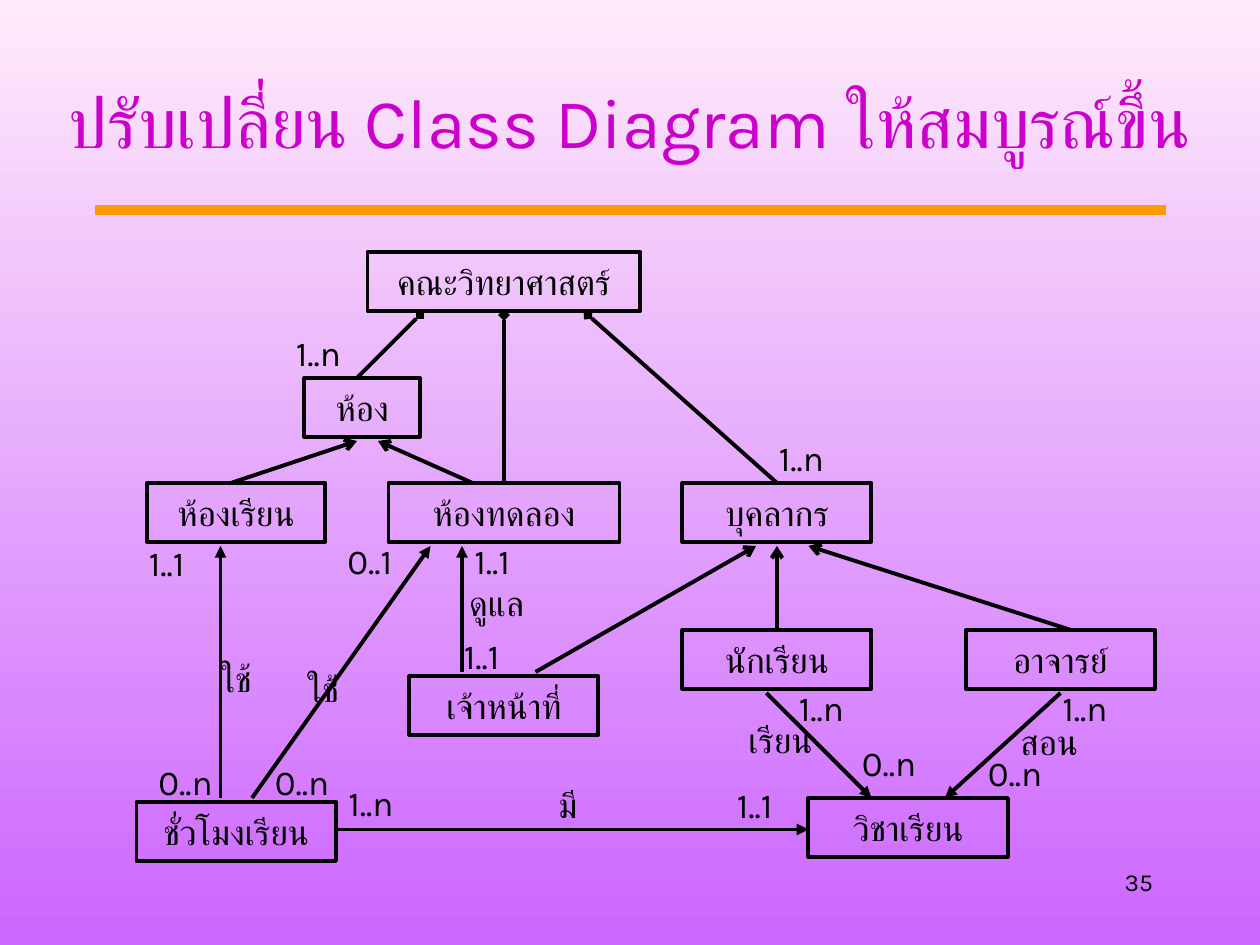
from dataclasses import dataclass

from lxml.etree import SubElement
from pptx import Presentation
from pptx.dml.color import RGBColor
from pptx.enum.shapes import MSO_CONNECTOR as Connector
from pptx.enum.shapes import MSO_SHAPE as Preset
from pptx.enum.text import MSO_ANCHOR as Anchor
from pptx.enum.text import PP_ALIGN as Align
from pptx.oxml.ns import qn
from pptx.util import Emu, Pt

EMU_PER_PX = 7620  # 120 px to the inch
BOX_HEIGHT = 56
LABEL_HEIGHT = 52


@dataclass(frozen=True)
class Theme:
    font: str = "Karla"
    ink: str = "000000"
    title: str = "CC00CC"
    rule: str = "FF9900"
    sky_top: str = "FFEBFA"
    sky_bottom: str = "CC66FF"
    title_size: int = 40
    body_size: int = 20
    number_size: int = 14
    line_width: float = 2.25
    rule_width: float = 6


@dataclass(frozen=True)
class ClassBox:
    name: str
    left: int
    top: int
    width: int


@dataclass(frozen=True)
class Label:
    text: str
    left: int
    top: int
    width: int = 80


@dataclass(frozen=True)
class Link:
    start: tuple[int, int]
    end: tuple[int, int]
    head: str


THEME = Theme()

BOXES = [
    ClassBox("คณะวิทยาศาสตร์", 350, 240, 260),
    ClassBox("ห้อง", 290, 360, 110),
    ClassBox("ห้องเรียน", 140, 460, 170),
    ClassBox("ห้องทดลอง", 370, 460, 220),
    ClassBox("บุคลากร", 650, 460, 180),
    ClassBox("นักเรียน", 650, 600, 180),
    ClassBox("อาจารย์", 920, 600, 180),
    ClassBox("เจ้าหน้าที่", 390, 644, 180),
    ClassBox("ชั่วโมงเรียน", 130, 764, 190),
    ClassBox("วิชาเรียน", 770, 760, 190),
]

LINKS = [
    # Aggregation: parts of the faculty
    Link((340, 360), (400, 300), "diamond"),
    Link((480, 460), (480, 300), "diamond"),
    Link((740, 460), (560, 300), "diamond"),
    # Inheritance: kinds of room and of personnel
    Link((220, 460), (340, 420), "arrow"),
    Link((450, 460), (360, 420), "arrow"),
    Link((510, 640), (720, 520), "arrow"),
    Link((740, 600), (740, 520), "arrow"),
    Link((1020, 600), (770, 520), "arrow"),
    # Association: uses, looks after, has, studies, teaches
    Link((210, 760), (210, 520), "triangle"),
    Link((240, 760), (410, 520), "triangle"),
    Link((440, 640), (440, 520), "triangle"),
    Link((320, 790), (770, 790), "triangle"),
    Link((730, 660), (830, 760), "triangle"),
    Link((1010, 660), (900, 760), "triangle"),
]

LABELS = [
    # Association names
    Label("ใช้", 198, 620, 60),
    Label("ใช้", 281, 630, 60),
    Label("ดูแล", 435, 548, 85),
    Label("มี", 520, 740, 44),
    Label("เรียน", 701, 678, 89),
    Label("สอน", 960, 680, 84),
    # Multiplicities
    Label("1..n", 270, 310),
    Label("1..n", 730, 410),
    Label("1..1", 130, 510),
    Label("0..1", 319, 508),
    Label("1..1", 440, 508),
    Label("1..1", 430, 598),
    Label("1..n", 749, 648),
    Label("1..n", 1000, 648),
    Label("0..n", 809, 700),
    Label("0..n", 929, 710),
    Label("0..n", 139, 718),
    Label("0..n", 250, 718),
    Label("1..n", 320, 738),
    Label("1..1", 690, 740),
]


def px(value: int) -> Emu:
    return Emu(value * EMU_PER_PX)


def color(value: str) -> RGBColor:
    return RGBColor.from_string(value)


def write_text(shape, text: str, *, size: int = THEME.body_size, ink: str = THEME.ink,
               align=Align.LEFT, anchor=Anchor.TOP, wrap: bool = False) -> None:
    frame = shape.text_frame
    frame.word_wrap = wrap
    frame.vertical_anchor = anchor
    paragraph = frame.paragraphs[0]
    paragraph.alignment = align
    run = paragraph.add_run()
    run.text = text
    run.font.name = THEME.font
    run.font.size = Pt(size)
    run.font.color.rgb = color(ink)
    # Thai letters take the complex-script font
    SubElement(run.font._element, qn("a:cs"), typeface=THEME.font)


def add_text(slide, text: str, left: int, top: int, width: int, height: int, **text_format) -> None:
    shape = slide.shapes.add_textbox(px(left), px(top), px(width), px(height))
    write_text(shape, text, **text_format)


def draw_box(slide, box: ClassBox) -> None:
    shape = slide.shapes.add_shape(
        Preset.RECTANGLE, px(box.left), px(box.top), px(box.width), px(BOX_HEIGHT))
    shape.shadow.inherit = False
    shape.fill.background()
    shape.line.color.rgb = color(THEME.ink)
    shape.line.width = Pt(THEME.line_width)
    write_text(shape, box.name, align=Align.CENTER, anchor=Anchor.MIDDLE)


def draw_line(slide, start: tuple[int, int], end: tuple[int, int], *, head: str = "none",
              ink: str = THEME.ink, width: float = THEME.line_width) -> None:
    connector = slide.shapes.add_connector(Connector.STRAIGHT, *map(px, start + end))
    connector.line.color.rgb = color(ink)
    connector.line.width = Pt(width)
    SubElement(connector.line._get_or_add_ln(), qn("a:tailEnd"), type=head)
    SubElement(connector._element.spPr, qn("a:effectLst"))


def paint_background(slide) -> None:
    fill = slide.background.fill
    fill.gradient()
    fill.gradient_angle = 270
    for stop, value in zip(fill.gradient_stops, (THEME.sky_top, THEME.sky_bottom)):
        stop.color.rgb = color(value)


def main() -> None:
    presentation = Presentation()
    presentation.slide_width, presentation.slide_height = px(1200), px(900)
    slide = presentation.slides.add_slide(presentation.slide_layouts[6])

    # Background, title, rule and page number
    paint_background(slide)
    draw_line(slide, (90, 200), (1110, 200), ink=THEME.rule, width=THEME.rule_width)
    add_text(slide, "ปรับเปลี่ยน Class Diagram ให้สมบูรณ์ขึ้น", 0, 40, 1200, 150,
             size=THEME.title_size, ink=THEME.title, align=Align.CENTER,
             anchor=Anchor.MIDDLE, wrap=True)
    add_text(slide, "35", 860, 820, 250, 60,
             size=THEME.number_size, align=Align.RIGHT, wrap=True)

    # Class diagram
    for box in BOXES:
        draw_box(slide, box)
    for link in LINKS:
        draw_line(slide, link.start, link.end, head=link.head)
    for label in LABELS:
        add_text(slide, label.text, label.left, label.top, label.width, LABEL_HEIGHT)

    presentation.save("out.pptx")


if __name__ == "__main__":
    main()
